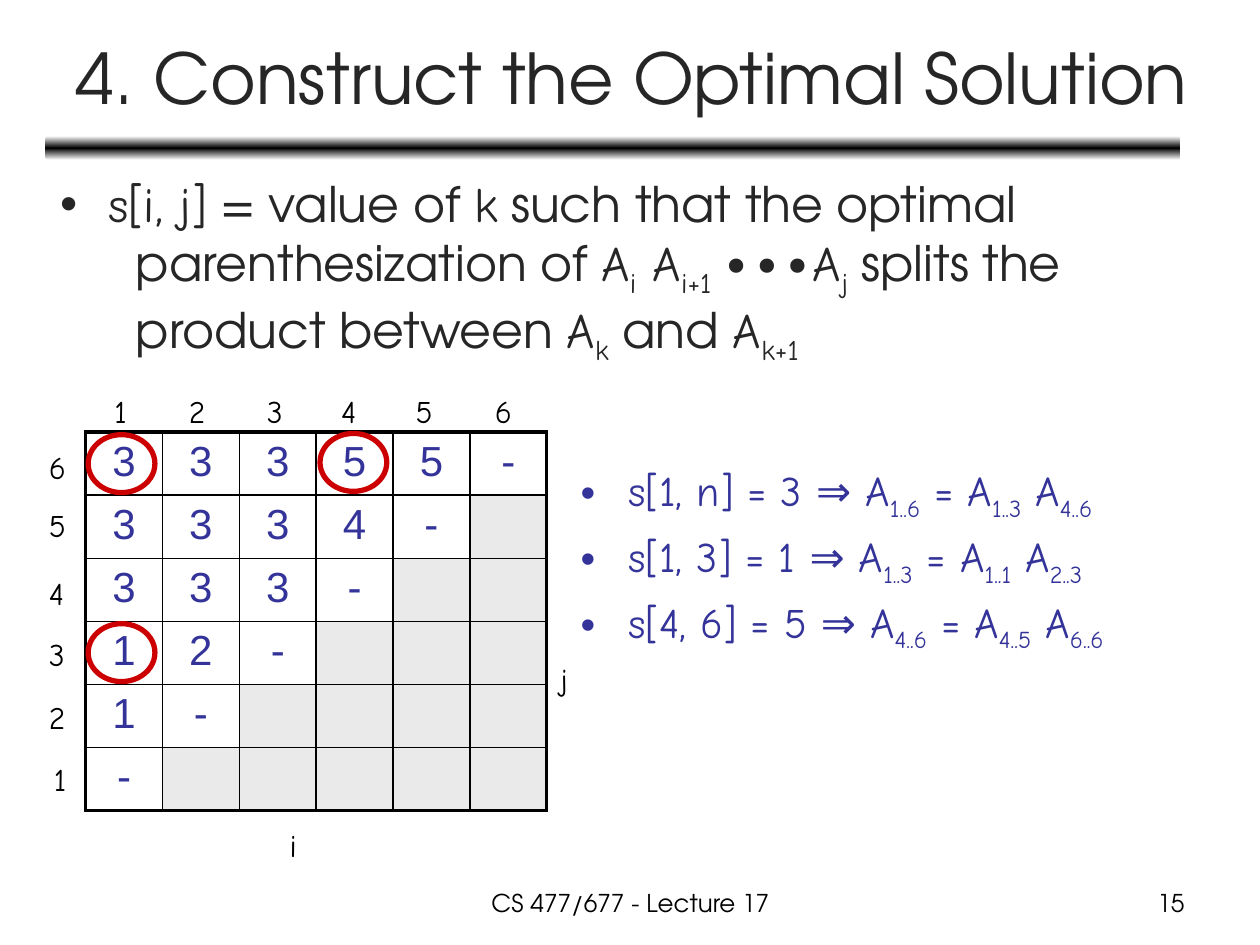
from copy import deepcopy
from dataclasses import dataclass

from lxml.etree import SubElement as Sub
from pptx import Presentation
from pptx.dml.color import RGBColor as RGB
from pptx.enum.shapes import MSO_SHAPE as Shape
from pptx.enum.text import MSO_ANCHOR as Anchor, PP_ALIGN as Align
from pptx.oxml.ns import qn
from pptx.util import Inches, Pt


@dataclass(frozen=True)
class Theme:
    sans: str = "TeX Gyre Adventor"
    math: str = "Comic Neue"
    cell: str = "Arial"
    ink: str = "262626"
    black: str = "000000"
    white: str = "FFFFFF"
    blue: str = "333399"
    red: str = "CC0000"
    grey: str = "EAEAEA"
    title: int = 40
    body: int = 28
    note: int = 24
    label: int = 18
    foot: int = 14
    thin: float = 1
    thick: float = 2.25


class Deck:
    def __init__(self, theme):
        self.theme = theme
        self.prs = Presentation()
        self.prs.slide_width, self.prs.slide_height = Inches(10), Inches(7.5)
        self.slide = self.prs.slides.add_slide(self.prs.slide_layouts[6])

    def style(self, font, face, size, color):
        font.name, font.size = face, Pt(size)
        font.color.rgb = RGB.from_string(color)

    def frame(self, box, wrap=True):
        tf = self.slide.shapes.add_textbox(*map(Inches, box)).text_frame
        tf.word_wrap = wrap
        return tf

    def text(self, words, box, face, size, color, align=Align.LEFT, wrap=True):
        tf = self.frame(box, wrap)
        tf.text = words
        tf.paragraphs[0].alignment = align
        self.style(tf.paragraphs[0].runs[0].font, face, size, color)
        return tf

    def label(self, words, x, y, width=0.35):
        t = self.theme
        self.text(words, (x, y, width, 0.4), t.math, t.label, t.black, wrap=False)

    def rich(self, items, box, size, color):
        """Each item is (bullet, indent, parts); in a part, bars enclose subscripts."""
        tf = self.frame(box)
        for n, (bullet, indent, parts) in enumerate(items):
            para = tf.add_paragraph() if n else tf.paragraphs[0]
            para.space_before = Pt(size * 0.2 if bullet else 0)
            props = para._p.get_or_add_pPr()
            props.set("marL", str(Inches(indent)))
            if bullet:
                props.set("indent", str(-Inches(indent)))
                Sub(props, qn("a:buFont")).set("typeface", self.theme.cell)
                Sub(props, qn("a:buChar")).set("char", "•")
            for face, words in parts:
                for k, piece in enumerate(words.split("|")):
                    if not piece:
                        continue
                    run = para.add_run()
                    run.text = piece
                    self.style(run.font, face, size, color)
                    if k % 2:
                        run.font._element.set("baseline", "-25000")

    def rule(self, box):
        t = self.theme
        bar = self.slide.shapes.add_shape(Shape.ROUNDED_RECTANGLE, *map(Inches, box))
        bar.shadow.inherit = False
        bar.line.fill.background()
        bar.fill.gradient()
        bar.fill.gradient_angle = 90
        stops = bar._element.spPr.find(".//" + qn("a:gsLst"))
        stops.append(deepcopy(stops[0]))
        colors = (t.white, t.black, t.white)
        for stop, place, color in zip(bar.fill.gradient_stops, (0, 0.5, 1), colors):
            stop.position = place
            stop.color.rgb = RGB.from_string(color)

    def ring(self, x, y):
        oval = self.slide.shapes.add_shape(
            Shape.OVAL, Inches(x), Inches(y), Inches(0.53), Inches(0.46))
        oval.shadow.inherit = False
        oval.fill.background()
        oval.line.color.rgb = RGB.from_string(self.theme.red)
        oval.line.width = Pt(3)

    def border(self, cell, sides):
        props = cell._tc.get_or_add_tcPr()
        for n, (side, width) in enumerate(sides):
            line = props.makeelement(qn("a:ln" + side), {"w": str(Pt(width))})
            fill = Sub(line, qn("a:solidFill"))
            Sub(fill, qn("a:srgbClr")).set("val", self.theme.black)
            props.insert(n, line)

    def grid(self, rows, x, y, width, height):
        t, size = self.theme, len(rows)
        table = self.slide.shapes.add_table(
            size, size, Inches(x), Inches(y),
            Inches(width * size), Inches(height * size)).table
        table.first_row = table.horz_banding = False
        for n in range(size):
            table.columns[n].width = Inches(width)
            table.rows[n].height = Inches(height)
        last = size - 1
        for r, row in enumerate(rows):
            for c in range(size):
                cell = table.cell(r, c)
                if c < len(row):
                    cell.fill.background()
                    cell.text = row[c]
                    para = cell.text_frame.paragraphs[0]
                    para.alignment = Align.CENTER
                    self.style(para.runs[0].font, t.cell, t.note, t.blue)
                else:
                    cell.fill.solid()
                    cell.fill.fore_color.rgb = RGB.from_string(t.grey)
                outer = {"L": c == 0, "R": c == last, "T": r == 0, "B": r == last}
                self.border(cell, [(side, t.thick if edge else t.thin)
                                   for side, edge in outer.items()])


def main():
    t = Theme()
    deck = Deck(t)

    # Heading and footer
    deck.rule((0.36, 1.08, 9.01, 0.19))
    deck.text("CS 477/677 - Lecture 17", (3.42, 7, 3.17, 0.35),
              t.sans, t.foot, t.black, Align.CENTER)
    head = deck.text("4. Construct the Optimal Solution", (0.37, 0.11, 9.29, 0.99),
                     t.sans, t.title, t.ink, Align.CENTER)
    head.vertical_anchor = Anchor.MIDDLE

    # Definition, with its later lines set further in
    deck.rich([
        (True, 0.38, [(t.math, "s[i, j]"), (t.sans, " = value of "), (t.math, "k"),
                      (t.sans, " such that the optimal")]),
        (False, 0.6, [(t.sans, "parenthesization of "),
                      (t.math, "A|i| A|i+1 |∙∙∙A|j|"),
                      (t.sans, " splits the product between "), (t.math, "A|k|"),
                      (t.sans, " and "), (t.math, "A|k+1|")]),
    ], (0.38, 1.33, 9.37, 1.65), t.body, t.ink)

    # Table of split points and its axes
    deck.grid(["33355-", "3334-", "333-", "12-", "1-", "-"], 0.68, 3.43, 0.61, 0.49)
    lefts = (0.81, 1.4, 2.02, 2.61, 3.2, 3.83)
    tops = (5.98, 5.49, 4.99, 4.51, 3.97, 3.51)
    for n, (left, top) in enumerate(zip(lefts, tops), 1):
        width = 0.31 if n == 1 else 0.35
        deck.label(str(n), left, 3.06, width)
        deck.label(str(n), 0.64 - width, top, width)
    deck.label("i", 2.2, 6.51, 0.27)
    deck.label("j", 4.35, 5.19, 0.3)

    # Splits read from the table
    splits = ("s[1, n] = 3 ⇒ A|1..6| = A|1..3| A|4..6|",
              "s[1, 3] = 1 ⇒ A|1..3| = A|1..1| A|2..3|",
              "s[4, 6] = 5 ⇒ A|4..6| = A|4..5| A|6..6|")
    deck.rich([(True, 0.38, [(t.math, split)]) for split in splits],
              (4.51, 3.64, 5.15, 2.37), t.note, t.blue)
    for x, y in ((0.7, 3.45), (0.7, 4.95), (2.54, 3.44)):
        deck.ring(x, y)

    # Page number
    deck.text("15", (7.17, 7, 2.33, 0.35), t.sans, t.foot, t.black, Align.RIGHT)
    deck.prs.save("out.pptx")


if __name__ == "__main__":
    main()
